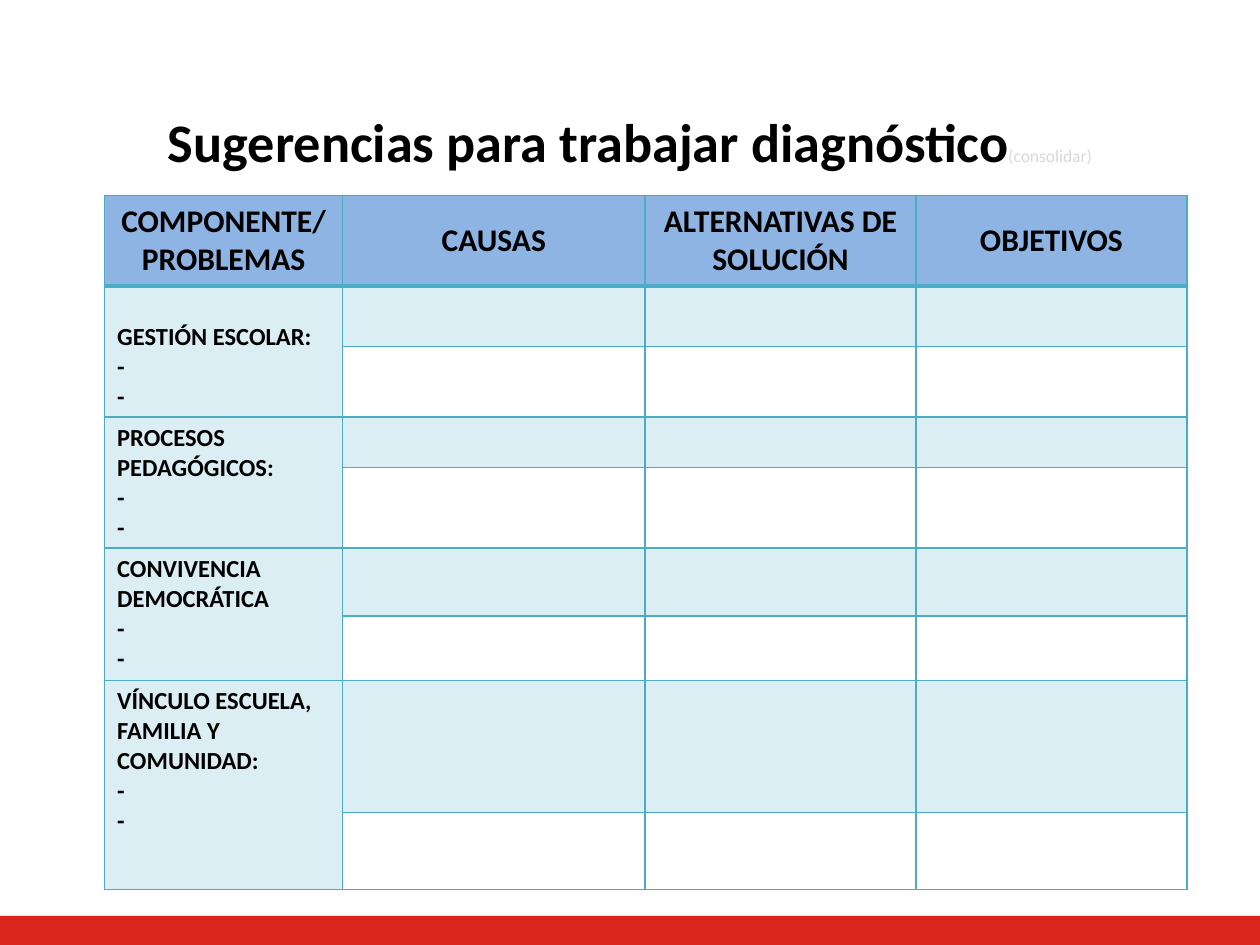
from dataclasses import dataclass

from lxml.etree import SubElement
from pptx import Presentation
from pptx.dml.color import RGBColor
from pptx.enum.shapes import MSO_SHAPE
from pptx.enum.text import MSO_ANCHOR, PP_ALIGN
from pptx.oxml.ns import qn
from pptx.util import Inches, Pt

BLACK = RGBColor(0x00, 0x00, 0x00)
GREY = RGBColor(0xD9, 0xD9, 0xD9)
RED = RGBColor(0xDA, 0x25, 0x1D)
HEADER_BLUE = RGBColor(0x8E, 0xB4, 0xE3)
TEAL = RGBColor(0x4B, 0xAC, 0xC6)
TINT = 20  # percent opacity of the shaded cells

WIDTH, HEIGHT = Inches(10), Inches(7.5)
COLUMNS = (1.89, 2.4, 2.15, 2.15)
HEADER_HEIGHT = 0.72
HEADERS = ("COMPONENTE/PROBLEMAS", "CAUSAS", "ALTERNATIVAS DE SOLUCIÓN", "OBJETIVOS")


@dataclass(frozen=True)
class Component:
    """A problem area: its label spans a shaded row and a plain row."""
    label: str
    shaded: float
    plain: float
    top_margin: float = 0.05


COMPONENTS = (
    Component("GESTIÓN ESCOLAR:", 0.48, 0.56, top_margin=0.29),
    Component("PROCESOS PEDAGÓGICOS:", 0.4, 0.64),
    Component("CONVIVENCIA DEMOCRÁTICA", 0.54, 0.51),
    Component("VÍNCULO ESCUELA, FAMILIA Y COMUNIDAD:", 1.05, 0.61),
)


def add_span(para, text: str, size: float, color: RGBColor = BLACK, bold: bool = True) -> None:
    span = para.add_run()
    span.text = text
    for name, value in dict(name="Calibri", size=Pt(size), bold=bold).items():
        setattr(span.font, name, value)
    span.font.color.rgb = color


def set_borders(cell, **widths: float) -> None:
    properties = cell._tc.get_or_add_tcPr()
    for side in "LRTB":
        line = SubElement(properties, qn(f"a:ln{side}"), w=str(Pt(widths.get(side, 1))))
        fill = SubElement(line, qn("a:solidFill"))
        SubElement(fill, qn("a:srgbClr"), val=str(TEAL))


def shade(cell) -> None:
    cell.fill.solid()
    cell.fill.fore_color.rgb = TEAL
    color = cell._tc.tcPr.find(qn("a:solidFill")).find(qn("a:srgbClr"))
    SubElement(color, qn("a:alpha"), val=str(TINT * 1000))


def add_footer(page) -> None:
    top = Inches(7.27)
    bar = page.shapes.add_shape(MSO_SHAPE.RECTANGLE, 0, top, WIDTH, HEIGHT - top)
    bar.shadow.inherit = False
    bar.fill.solid()
    bar.fill.fore_color.rgb = RED
    bar.line.fill.background()


def add_title(page) -> None:
    box = page.shapes.add_textbox(Inches(0.5), Inches(0.76), Inches(9), Inches(0.71))
    frame = box.text_frame
    for name, value in dict(word_wrap=True, vertical_anchor=MSO_ANCHOR.MIDDLE).items():
        setattr(frame, name, value)
    para = frame.paragraphs[0]
    para.alignment = PP_ALIGN.CENTER
    add_span(para, "Sugerencias para trabajar diagnóstico", 31)
    add_span(para, "(consolidar)", 10, GREY, bold=False)


def fill_header(table) -> None:
    for cell, text in zip(table.rows[0].cells, HEADERS):
        set_borders(cell, B=2)
        cell.fill.solid()
        cell.fill.fore_color.rgb = HEADER_BLUE
        cell.vertical_anchor = MSO_ANCHOR.MIDDLE
        para = cell.text_frame.paragraphs[0]
        para.alignment = PP_ALIGN.CENTER
        add_span(para, text, 18)


def fill_component(table, row: int, component: Component) -> None:
    for offset in (0, 1):
        for column in range(len(COLUMNS)):
            cell = table.cell(row + offset, column)
            set_borders(cell, T=2 if row + offset == 1 else 1)
            cell.text_frame.paragraphs[0].font.size = Pt(14)
            if offset == 0:
                shade(cell)
            else:
                cell.fill.background()
    # Label followed by two empty dashes to fill in
    label = table.cell(row, 0)
    label.merge(table.cell(row + 1, 0))
    label.margin_top = Inches(component.top_margin)
    frame = label.text_frame
    add_span(frame.paragraphs[0], component.label, 14)
    for _ in range(2):
        add_span(frame.add_paragraph(), "-", 14)


def add_diagnosis_table(page) -> None:
    heights = [HEADER_HEIGHT]
    for component in COMPONENTS:
        heights += [component.shaded, component.plain]
    table = page.shapes.add_table(
        len(heights), len(COLUMNS), Inches(0.83), Inches(1.55),
        Inches(sum(COLUMNS)), Inches(sum(heights))).table
    table.first_row = table.horz_banding = False
    for column, width in zip(table.columns, COLUMNS):
        column.width = Inches(width)
    for row, height in zip(table.rows, heights):
        row.height = Inches(height)
    fill_header(table)
    for index, component in enumerate(COMPONENTS):
        fill_component(table, 1 + 2 * index, component)


def main() -> None:
    deck = Presentation()
    deck.slide_width, deck.slide_height = WIDTH, HEIGHT
    page = deck.slides.add_slide(deck.slide_layouts[6])
    add_footer(page)
    add_title(page)
    add_diagnosis_table(page)
    deck.save("out.pptx")


if __name__ == "__main__":
    main()
